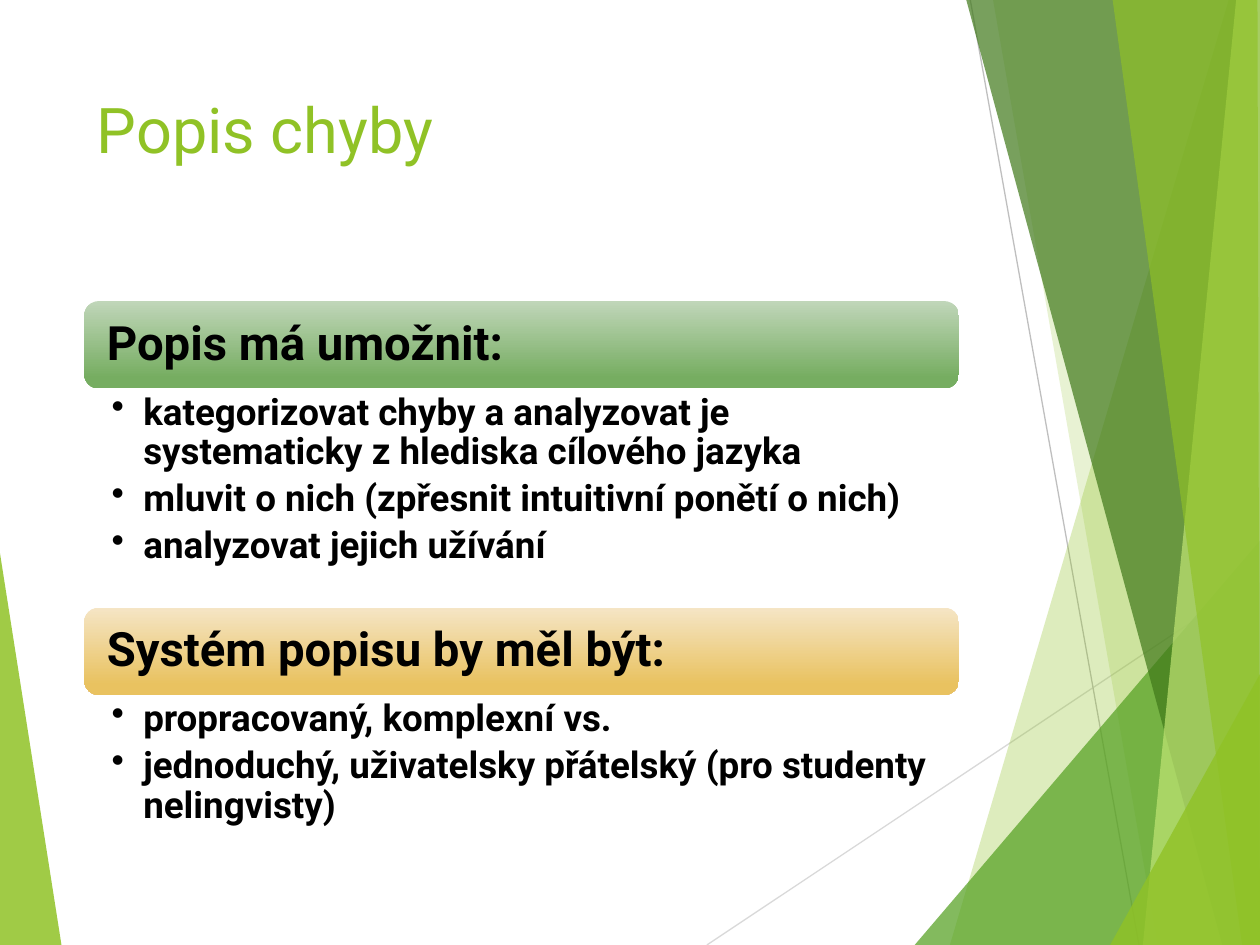
from lxml.etree import SubElement
from pptx import Presentation
from pptx.dml.color import RGBColor
from pptx.enum.shapes import MSO_CONNECTOR as Connector, MSO_SHAPE as Shape
from pptx.enum.text import MSO_ANCHOR as Anchor, MSO_AUTO_SIZE as AutoSize, PP_ALIGN as Align
from pptx.oxml.ns import qn
from pptx.util import Cm, Pt

WIDTH, HEIGHT = 25.4, 19.05
LEFT, CONTENT_WIDTH, HEADING_HEIGHT = 1.7, 17.63, 1.76
FONT = "Roboto"

RAYS = [
    ("D9D9D9", (14.25, HEIGHT), (WIDTH, 11.62)),
    ("BFBFBF", (19.56, 0), (22.96, HEIGHT)),
]
FACETS = [
    ("90C226", 85, [(0, 11.15), (1.24, HEIGHT), (0, HEIGHT)]),
    ("90C226", 30, [(24.77, 0), (19.15, HEIGHT), (WIDTH, HEIGHT), (WIDTH, 0)]),
    ("90C226", 20, [(20.02, 0), (23.34, HEIGHT), (WIDTH, HEIGHT), (WIDTH, 0)]),
    ("54A021", 72, [(18.44, HEIGHT), (WIDTH, 10.9), (WIDTH, HEIGHT)]),
    ("3F7819", 70, [(19.48, 0), (24.64, HEIGHT), (WIDTH, HEIGHT), (WIDTH, 0)]),
    ("C0E474", 70, [(24.92, 0), (23.04, HEIGHT), (WIDTH, HEIGHT), (WIDTH, 0)]),
    ("90C226", 65, [(22.43, 0), (25.04, HEIGHT), (WIDTH, HEIGHT), (25.35, 0)]),
    ("90C226", 80, [(22.38, HEIGHT), (WIDTH, 13.59), (WIDTH, HEIGHT)]),
]
SECTIONS = [
    (6.07, 4.42, ("C0D6B9", "76AD61"), "Popis má umožnit:", [
        "kategorizovat chyby a analyzovat je systematicky z hlediska cílového jazyka",
        "mluvit o nich (zpřesnit intuitivní ponětí o nich)",
        "analyzovat jejich užívání",
    ]),
    (12.25, 2.72, ("F5E5C5", "E9C260"), "Systém popisu by měl být:", [
        "propracovaný, komplexní vs.",
        "jednoduchý, uživatelsky přátelský (pro studenty nelingvisty)",
    ]),
]


def color(value):
    return RGBColor.from_string(value)


def set_font(para, size, value, bold=False):
    para.font.name = FONT
    para.font.size = Pt(size)
    para.font.bold = bold
    para.font.color.rgb = color(value)


def set_margins(frame, sides, ends):
    frame.margin_left = frame.margin_right = Cm(sides)
    frame.margin_top = frame.margin_bottom = Cm(ends)


def add_ray(page, value, start, end):
    ray = page.shapes.add_connector(Connector.STRAIGHT, *map(Cm, start + end))
    ray.line.color.rgb = color(value)
    ray.line.width = Pt(0.75)
    SubElement(ray._element.spPr, qn("a:effectLst"))


def add_facet(page, value, opacity, points):
    corners = [(Cm(x), Cm(y)) for x, y in points]
    builder = page.shapes.build_freeform(*corners[0])
    builder.add_line_segments(corners[1:], close=True)
    facet = builder.convert_to_shape()
    facet.shadow.inherit = False
    facet.line.fill.background()
    facet.fill.solid()
    facet.fill.fore_color.rgb = color(value)
    fill_color = facet._element.spPr.find(qn("a:solidFill"))[0]
    SubElement(fill_color, qn("a:alpha")).set("val", str(opacity * 1000))


def add_title(page, text):
    title = page.shapes.title
    title.left, title.top = Cm(LEFT), Cm(1.7)
    title.width, title.height = Cm(CONTENT_WIDTH), Cm(3.66)
    frame = title.text_frame
    frame.text = text
    frame.auto_size = AutoSize.NONE
    frame.vertical_anchor = Anchor.TOP
    para = frame.paragraphs[0]
    para.alignment = Align.LEFT
    set_font(para, 36, "90C226")


def add_heading(page, top, gradient, text):
    bar = page.shapes.add_shape(
        Shape.ROUNDED_RECTANGLE, Cm(LEFT), Cm(top), Cm(CONTENT_WIDTH), Cm(HEADING_HEIGHT))
    bar.shadow.inherit = False
    bar.line.fill.background()
    bar.fill.gradient()
    bar.fill.gradient_angle = 270
    for stop, value, position in zip(bar.fill.gradient_stops, gradient, (0, 0.88)):
        stop.color.rgb = color(value)
        stop.position = position
    frame = bar.text_frame
    set_margins(frame, 0.37, 0.28)
    frame.vertical_anchor = Anchor.MIDDLE
    frame.text = text
    para = frame.paragraphs[0]
    para.alignment = Align.LEFT
    para.line_spacing = 0.9
    set_font(para, 27, "000000", bold=True)


def add_bullets(page, top, height, items):
    box = page.shapes.add_textbox(Cm(LEFT), Cm(top), Cm(CONTENT_WIDTH), Cm(height))
    frame = box.text_frame
    frame.word_wrap = True
    set_margins(frame, 0.55, 0.1)
    frame.text = "\n".join(items)
    for para in frame.paragraphs:
        para.level = 1
        properties = para._p.get_or_add_pPr()
        properties.set("marL", str(Cm(0.64)))
        properties.set("indent", str(-Cm(0.64)))
        SubElement(properties, qn("a:buChar")).set("char", "•")
        para.line_spacing = 0.9
        para.space_after = Pt(4.2)
        set_font(para, 21, "000000", bold=True)


def main():
    deck = Presentation()
    deck.slide_width, deck.slide_height = Cm(WIDTH), Cm(HEIGHT)
    page = deck.slides.add_slide(deck.slide_layouts[5])
    for ray in RAYS:
        add_ray(page, *ray)
    for facet in FACETS:
        add_facet(page, *facet)
    add_title(page, "Popis chyby")
    for top, height, gradient, heading, items in SECTIONS:
        add_heading(page, top, gradient, heading)
        add_bullets(page, top + HEADING_HEIGHT, height, items)
    deck.save("out.pptx")


if __name__ == "__main__":
    main()
